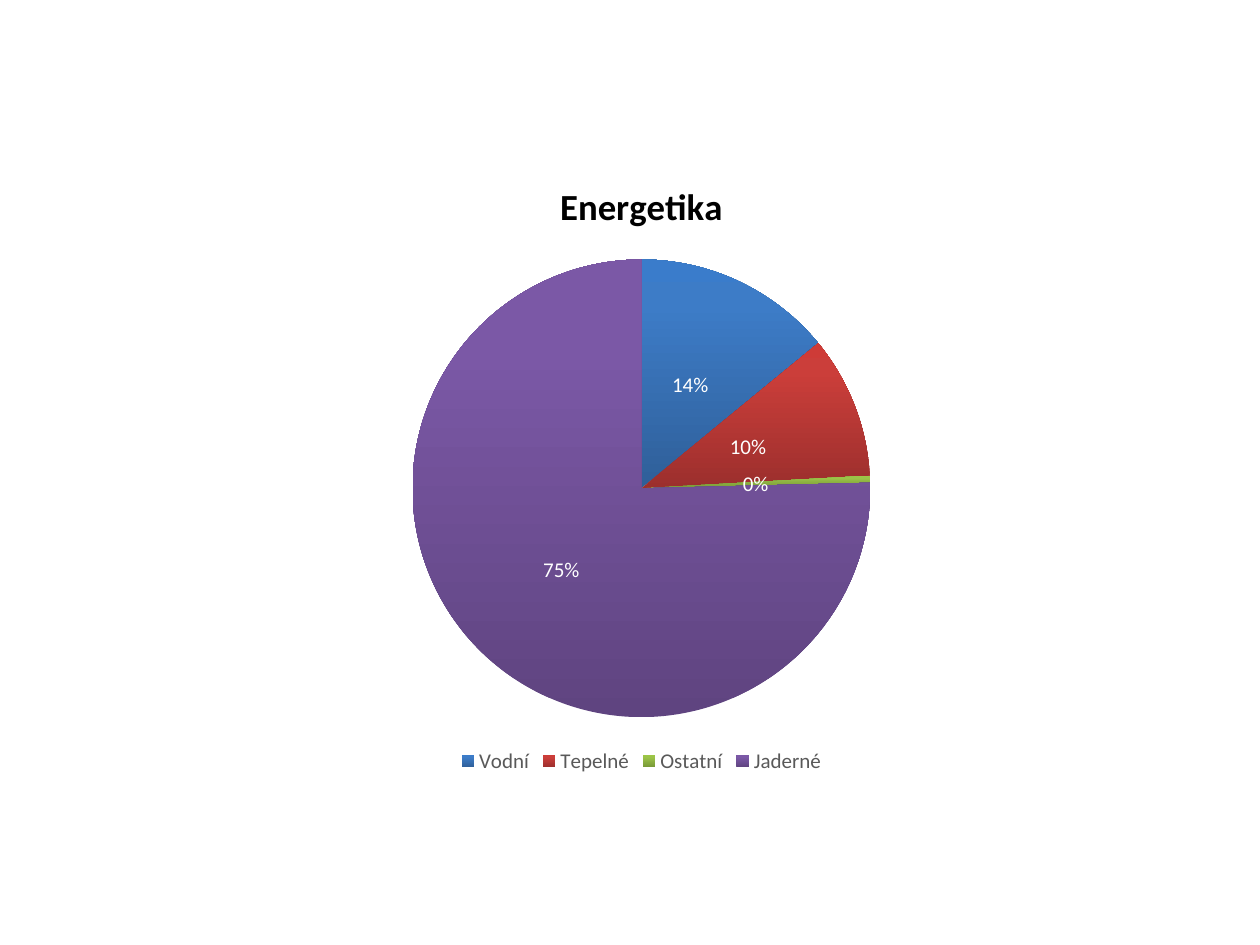
"""Build a slide with one pie chart of energy sources."""
from copy import deepcopy
from pptx import Presentation
from pptx import util as u
from pptx.chart import data
from pptx.dml.color import RGBColor
from pptx.enum import chart as ch


def color(value):
    return RGBColor.from_string(value)


def style(font, size, hex_color, bold=False):
    font.name, font.size, font.bold = "Calibri", u.Pt(size), bold
    font.color.rgb = color(hex_color)


prs = Presentation()
prs.slide_width, prs.slide_height = u.Inches(10), u.Inches(7.5)
s = prs.slides.add_slide(prs.slide_layouts[6])

sources = [
    ("Vodní", 14, ("2F5F99", "3D7CC7", "3A7CCB")),
    ("Tepelné", 10, ("9C2F2D", "CB3E3A", "CE3B37")),
    ("Ostatní", 0.49, ("779737", "9BC348", "9DC746")),
    ("Jaderné", 75, ("5F4480", "7B58A6", "7C57A8")),
]
cd = data.CategoryChartData()
cd.categories = [name for name, _, _ in sources]
cd.add_series("Series 1", [value for _, value, _ in sources])
chart = s.shapes.add_chart(
    ch.XL_CHART_TYPE.PIE, u.Inches(0.59), u.Inches(1.23), u.Inches(9), u.Inches(4.95), cd
).chart
style(chart.font, 10, "000000")

chart.has_title = True
tf = chart.chart_title.text_frame
tf.text = "Energetika"
style(tf.paragraphs[0].runs[0].font, 21, "000000", bold=True)
chart.chart_title.include_in_layout = False

chart.has_legend = True
chart.legend.position = ch.XL_LEGEND_POSITION.BOTTOM
chart.legend.include_in_layout = False
style(chart.legend.font, 12, "595959")

plot = chart.plots[0]
plot.vary_by_categories = True
plot.has_data_labels = True
labels = plot.data_labels
labels.show_percentage, labels.show_value = True, False
labels.number_format, labels.number_format_is_linked = "0%", False
labels.position = ch.XL_LABEL_POSITION.CENTER
style(labels.font, 12, "FFFFFF")

for i, (_, _, shades) in enumerate(sources):
    fill = plot.series[0].points[i].format.fill
    fill.gradient()
    fill.gradient_angle = 90
    stops = chart.element.xpath(".//a:gsLst")[-1]
    stops.insert(1, deepcopy(stops[0]))
    for stop, shade, position in zip(fill.gradient_stops, shades, (0, 0.8, 1)):
        stop.color.rgb = color(shade)
        stop.position = position

prs.save("out.pptx")
